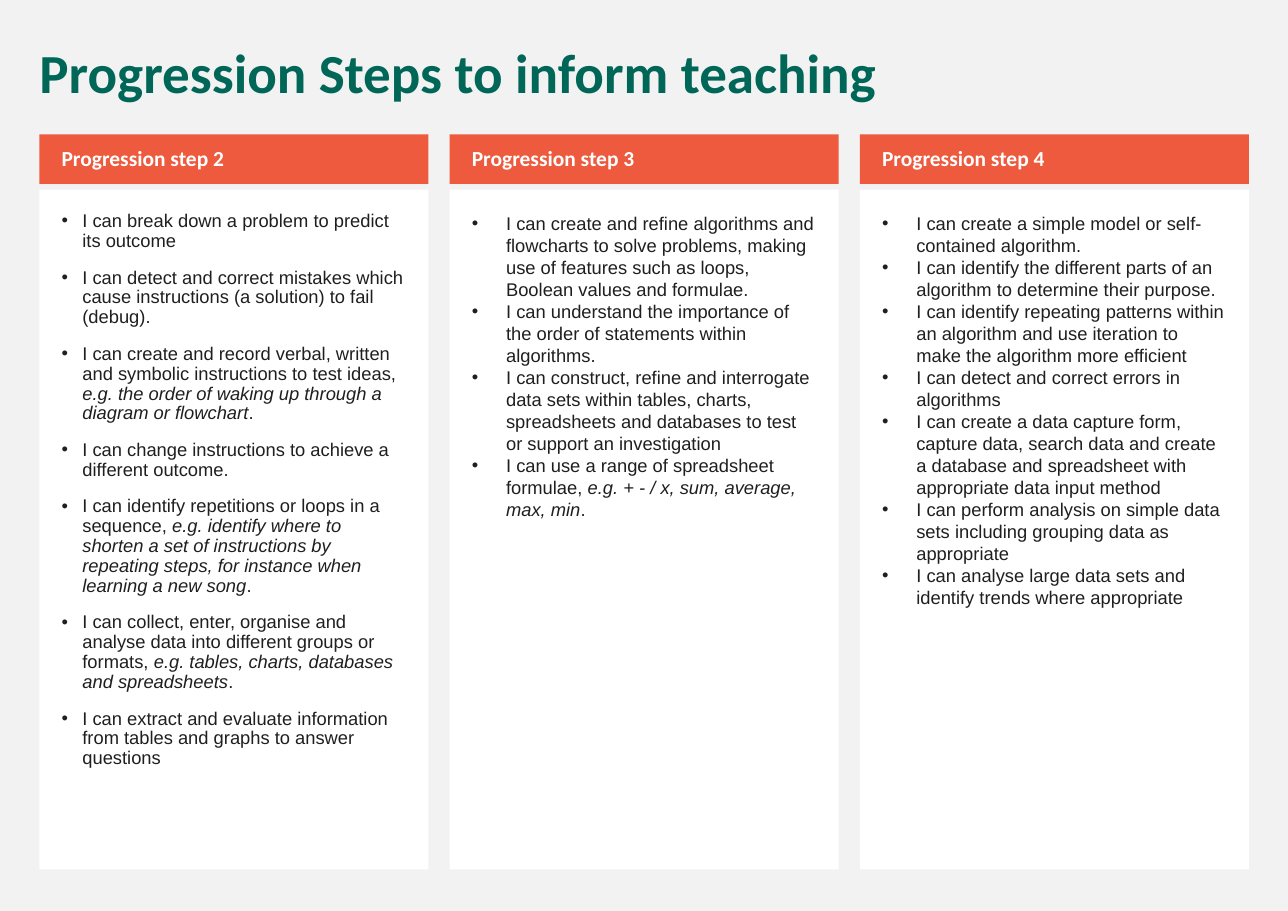
from dataclasses import dataclass

from lxml import etree
from pptx import Presentation
from pptx.dml.color import RGBColor
from pptx.enum.shapes import MSO_SHAPE
from pptx.enum.text import MSO_ANCHOR, MSO_AUTO_SIZE, PP_ALIGN
from pptx.oxml.ns import qn
from pptx.util import Cm, Pt

RECT = MSO_SHAPE.RECTANGLE
TOP, MIDDLE = MSO_ANCHOR.TOP, MSO_ANCHOR.MIDDLE
LEFT = PP_ALIGN.LEFT
FIXED = MSO_AUTO_SIZE.NONE


@dataclass(frozen=True)
class Theme:
    page: RGBColor = RGBColor.from_string("F2F2F2")
    card: RGBColor = RGBColor.from_string("FFFFFF")
    band: RGBColor = RGBColor.from_string("ED5A3E")
    green: RGBColor = RGBColor.from_string("006758")
    ink: RGBColor = RGBColor.from_string("1F1F1F")
    big: Pt = Pt(36)
    mid: Pt = Pt(14)
    small: Pt = Pt(12)
    gap: Pt = Pt(11)
    head: str = "Calibri"
    text: str = "Arial"


THEME = Theme()
TITLE_FONT = {"name": THEME.head, "size": THEME.big, "bold": True}
HEAD_FONT = {"name": THEME.head, "size": THEME.mid, "bold": True}
LIST_FONT = {"name": THEME.text, "size": THEME.small, "bold": False}
TIGHT = {"alignment": LEFT, "line_spacing": 0.9, "space_before": THEME.gap}
PLAIN = {"alignment": LEFT, "line_spacing": 1.0, "space_before": Pt(0)}

STEPS = [
    ("Progression step 2", TIGHT, 0.48, [
        "I can break down a problem to predict its outcome",
        "I can detect and correct mistakes which cause instructions (a solution) to fail (debug).",
        "I can create and record verbal, written and symbolic instructions to test ideas, "
        "|e.g. the order of waking up through a diagram or flowchart|.",
        "I can change instructions to achieve a different outcome.",
        "I can identify repetitions or loops in a sequence, "
        "|e.g. identify where to shorten a set of instructions by repeating steps, "
        "for instance when learning a new song|.",
        "I can collect, enter, organise and analyse data into different groups or formats, "
        "|e.g. tables, charts, databases and spreadsheets|.",
        "I can extract and evaluate information from tables and graphs to answer questions",
    ]),
    ("Progression step 3", PLAIN, 0.79, [
        "I can create and refine algorithms and flowcharts to solve problems, "
        "making use of features such as loops, Boolean values and formulae.",
        "I can understand the importance of the order of statements within algorithms.",
        "I can construct, refine and interrogate data sets within tables, charts, "
        "spreadsheets and databases to test or support an investigation",
        "I can use a range of spreadsheet formulae, |e.g. + - / x, sum, average, max, min|.",
    ]),
    ("Progression step 4", PLAIN, 0.79, [
        "I can create a simple model or self-contained algorithm.",
        "I can identify the different parts of an algorithm to determine their purpose.",
        "I can identify repeating patterns within an algorithm and use iteration "
        "to make the algorithm more efficient",
        "I can detect and correct errors in algorithms",
        "I can create a data capture form, capture data, search data and create "
        "a database and spreadsheet with appropriate data input method",
        "I can perform analysis on simple data sets including grouping data as appropriate",
        "I can analyse large data sets and identify trends where appropriate",
    ]),
]


def apply(item, values):
    for key, value in values.items():
        setattr(item, key, value)


def place(shape, box):
    names = ("left", "top", "width", "height")
    apply(shape, {name: Cm(size) for name, size in zip(names, box)})


def frame(shape, anchor, pads):
    names = ("margin_left", "margin_top", "margin_right", "margin_bottom")
    body = shape.text_frame
    apply(body, {name: Cm(pad) for name, pad in zip(names, pads)})
    apply(body, {"word_wrap": True, "auto_size": FIXED, "vertical_anchor": anchor})
    return body


def write(para, text, style, font, color):
    apply(para, style)
    for i, part in enumerate(text.split("|")):
        run = para.add_run()
        run.text = part
        apply(run.font, font | {"italic": i % 2 == 1})
        run.font.color.rgb = color


def bullet(para, indent):
    props = para._p.get_or_add_pPr()
    props.set("marL", str(Cm(indent)))
    props.set("indent", str(-Cm(indent)))
    etree.SubElement(props, qn("a:buChar")).set("char", "•")


def put_title(shape, box):
    place(shape, box)
    body = frame(shape, MIDDLE, (0.25, 0.13, 0.25, 0.13))
    write(body.paragraphs[0], "Progression Steps to inform teaching",
          TIGHT, TITLE_FONT, THEME.green)


def put_head(slide, box, text):
    shape = slide.shapes.add_shape(RECT, *map(Cm, box))
    shape.shadow.inherit = False
    shape.fill.solid()
    shape.fill.fore_color.rgb = THEME.band
    shape.line.fill.background()
    body = frame(shape, MIDDLE, (0.51, 0.13, 0.25, 0.13))
    write(body.paragraphs[0], text, TIGHT, HEAD_FONT, THEME.card)


def put_list(shape, box, items, style, indent):
    place(shape, box)
    shape.fill.solid()
    shape.fill.fore_color.rgb = THEME.card
    body = frame(shape, TOP, (0.51,) * 4)
    for i, text in enumerate(items):
        para = body.add_paragraph() if i else body.paragraphs[0]
        write(para, text, style, LIST_FONT, THEME.ink)
        bullet(para, indent)


def put_step(slide, holder, box, step):
    head, style, indent, items = step
    left, top, width, height = box
    band, drop = 1.14, 1.27
    put_list(holder, (left, top + drop, width, height - drop), items, style, indent)
    put_head(slide, (left, top, width, band), head)


def main():
    deck = Presentation()
    apply(deck, {"slide_width": Cm(29.7), "slide_height": Cm(21)})
    slide = deck.slides.add_slide(deck.slide_layouts.get_by_name("Comparison"))
    slide.background.fill.solid()
    slide.background.fill.fore_color.rgb = THEME.page

    title, *holders, spare = slide.placeholders
    spare._element.getparent().remove(spare._element)
    put_title(title, (0.66, 0.91, 28.14, 1.65))
    for i, (holder, step) in enumerate(zip(holders, STEPS)):
        put_step(slide, holder, (0.91 + 9.46 * i, 3.1, 8.97, 16.94), step)
    deck.save("out.pptx")


if __name__ == "__main__":
    main()
